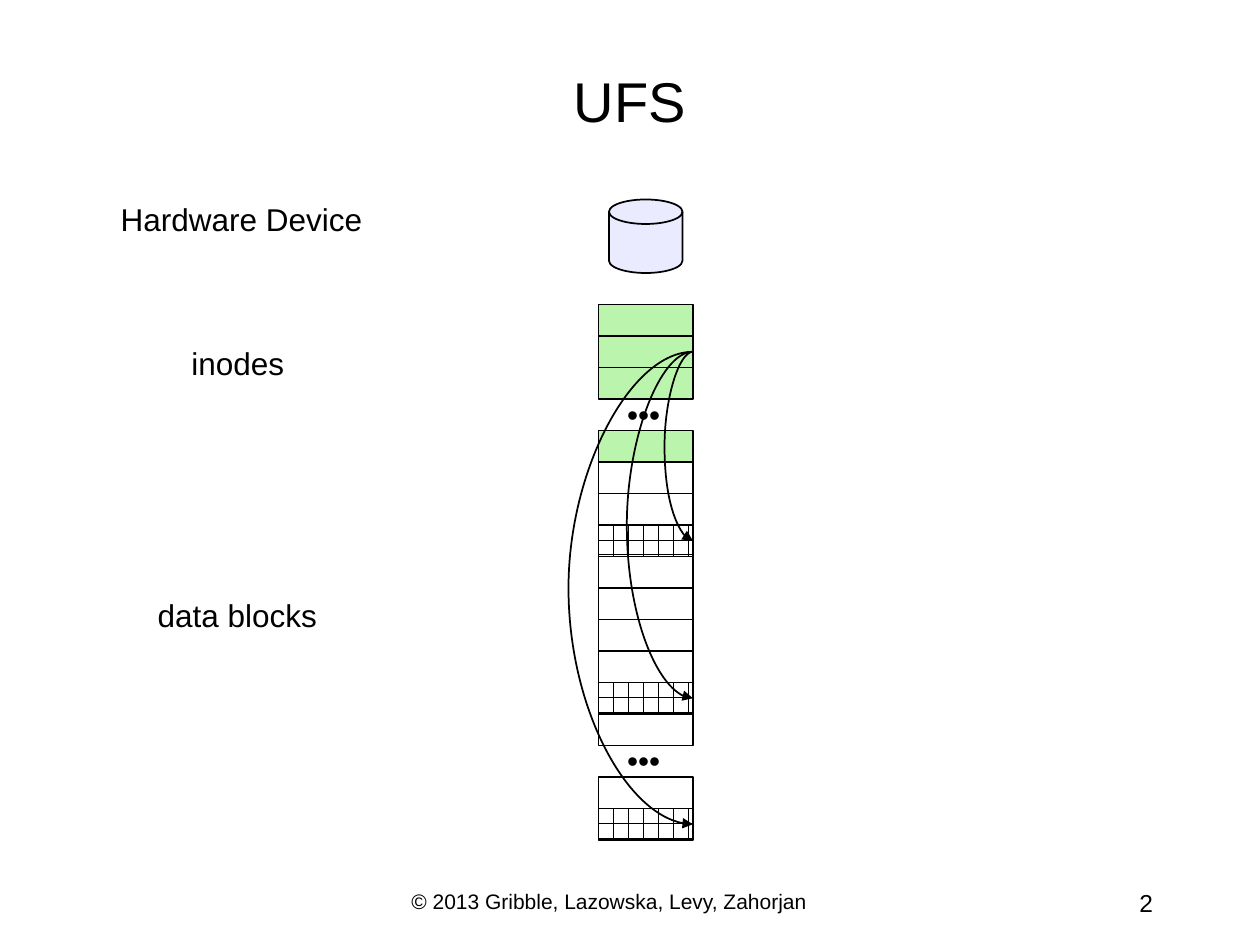
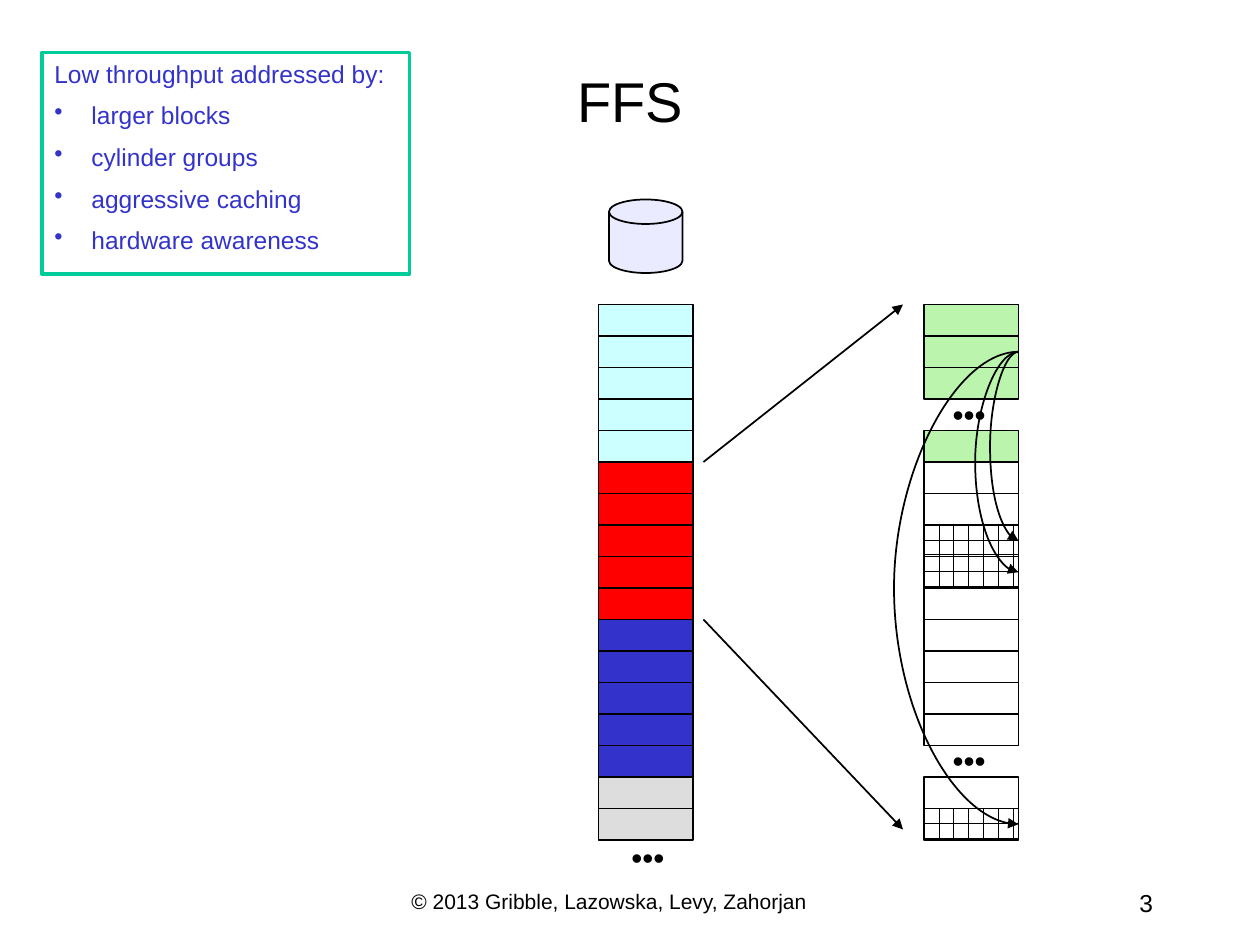
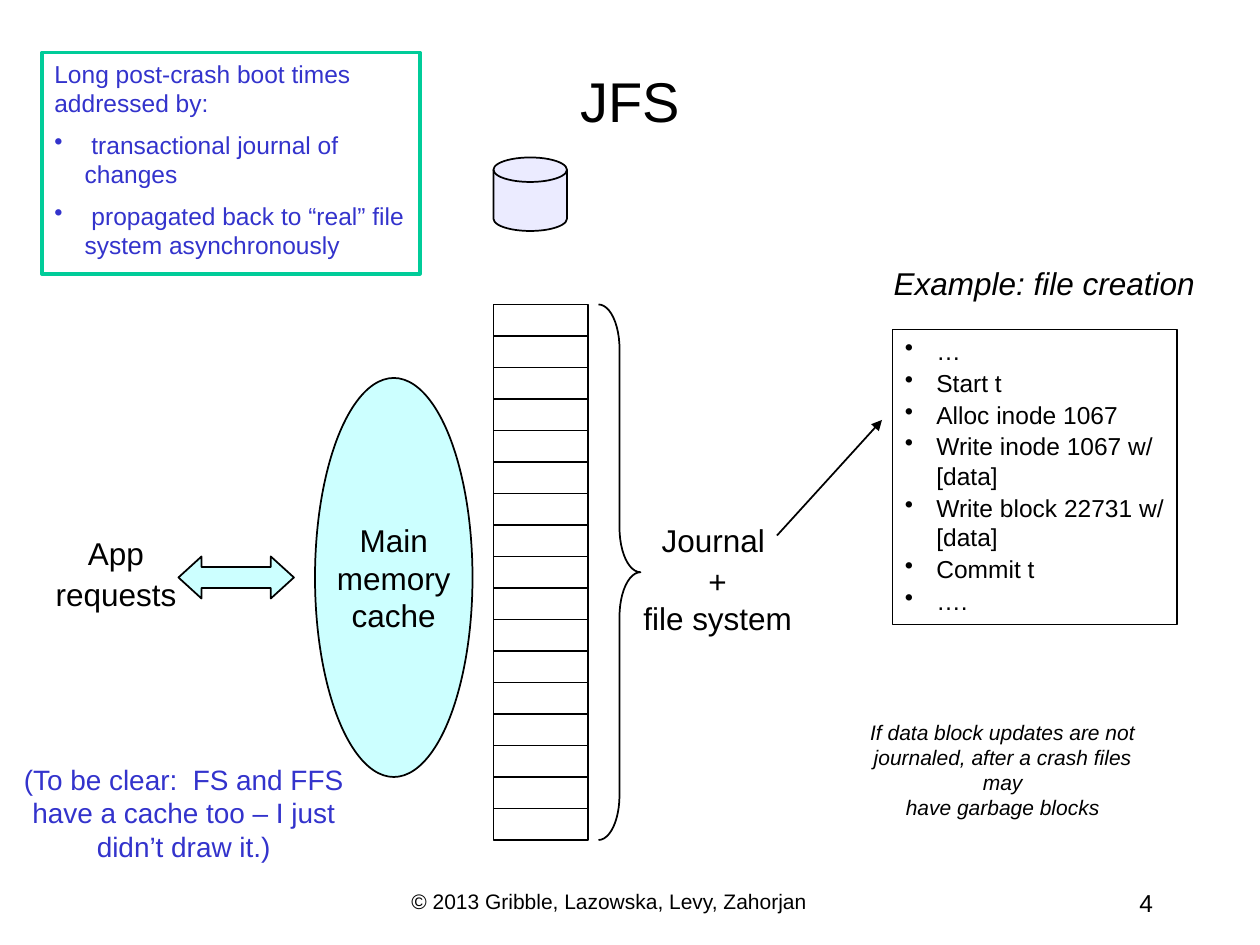
from copy import deepcopy
from dataclasses import dataclass

from lxml import etree
from pptx import Presentation
from pptx import util as u
from pptx.dml.color import RGBColor
from pptx.enum import dml, shapes, text
from pptx.oxml.ns import qn


@dataclass(frozen=True)
class Theme:
    font: str = "Arial"
    ink: str = "000000"
    paper: str = "FFFFFF"
    accent: str = "3333CC"
    frame: str = "00CC99"
    disk: str = "EBEBFF"
    inode: str = "BBF5AD"
    cache: str = "CCFFFF"
    active: str = "FF0000"
    rest: str = "DDDDDD"
    title: int = 32
    label: int = 18
    aside: int = 16
    body: int = 14
    small: int = 12


THEME = Theme()
SHAPE = shapes.MSO_SHAPE
LEFT, CENTER, RIGHT = text.PP_ALIGN.LEFT, text.PP_ALIGN.CENTER, text.PP_ALIGN.RIGHT

# The slide is a grid of 120 by 90 cells, 12 to the inch.
COLUMNS, ROWS, CELLS_PER_INCH = 120, 90, 12
BLOCK_WIDTH, BLOCK_HEIGHT, STACK_TOP = 9, 3, 29
DISK_COLUMN = 57
HAIRLINE = 1588  # EMU; the width that a pointer's bend is measured in

BLOCK_FILLS = {"i": THEME.inode, "-": None, "#": "brick", "c": THEME.cache,
               "r": THEME.active, "b": THEME.accent, "g": THEME.rest}
GAP = "."


def cells(count):
    return u.Inches(count / CELLS_PER_INCH)


def rgb(value):
    return RGBColor.from_string(value)


def write(frame, content, size=THEME.label, color=THEME.ink, align=CENTER,
          italic=False, before=0.1, bullets_from=None, indent=0.25,
          wrap=False, anchor=text.MSO_ANCHOR.TOP):
    """Fill a text frame; content is one string or a list of paragraphs."""
    frame.word_wrap = wrap
    frame.vertical_anchor = anchor
    lines = [content] if isinstance(content, str) else content
    for number, line in enumerate(lines):
        paragraph = frame.paragraphs[0] if number == 0 else frame.add_paragraph()
        paragraph.text = line
        paragraph.alignment = align
        paragraph.space_before = u.Pt(size * before)
        for run in paragraph.runs:
            run.font.name, run.font.size = THEME.font, u.Pt(size)
            run.font.italic = italic
            run.font.color.rgb = rgb(color)
        for line_break in paragraph._p.findall(qn("a:br")):
            line_break.append(deepcopy(paragraph.runs[0]._r.rPr))
        if bullets_from is not None and number >= bullets_from:
            properties = paragraph._p.get_or_add_pPr()
            properties.set("marL", str(u.Inches(indent)))
            properties.set("indent", str(-u.Inches(indent)))
            etree.SubElement(properties, qn("a:buChar")).set("char", "•")


def label(slide, box, content, **style):
    area = slide.shapes.add_textbox(*map(cells, box))
    write(area.text_frame, content, **style)


def outlined(slide, kind, box, fill=None, line=THEME.ink, weight=1):
    shape = slide.shapes.add_shape(kind, *map(cells, box))
    shape.shadow.inherit = False
    shape.line.color.rgb = rgb(line)
    shape.line.width = u.Pt(weight)
    if fill is None:
        shape.fill.background()
    elif fill == "brick":
        shape.fill.patterned()
        shape.fill.pattern = dml.MSO_PATTERN.HORIZONTAL_BRICK
        shape.fill.fore_color.rgb = rgb(THEME.ink)
        shape.fill.back_color.rgb = rgb(THEME.paper)
    else:
        shape.fill.solid()
        shape.fill.fore_color.rgb = rgb(fill)
    return shape


def arrow(slide, start, end, kind=shapes.MSO_CONNECTOR.STRAIGHT):
    connector = slide.shapes.add_connector(kind, *map(cells, (*start, *end)))
    connector.line.color.rgb = rgb(THEME.ink)
    connector.line.width = u.Pt(1)
    head = etree.SubElement(connector.line._get_or_add_ln(), qn("a:tailEnd"))
    head.set("type", "triangle")
    etree.SubElement(connector._element.spPr, qn("a:effectLst"))
    return connector


def pointer(slide, source, target, bend):
    """Curved arrow from the right side of one block to that of another."""
    connector = arrow(slide, (0, 0), (0, 0), shapes.MSO_CONNECTOR.CURVE)
    connector.begin_connect(source, 3)
    connector.end_connect(target, 3)
    connector.width = u.Emu(HAIRLINE)
    geometry = connector._element.spPr.find(qn("a:prstGeom"))
    guides = geometry.find(qn("a:avLst"))
    if guides is None:
        guides = etree.SubElement(geometry, qn("a:avLst"))
    guide = etree.SubElement(guides, qn("a:gd"))
    guide.set("name", "adj1")
    guide.set("fmla", f"val {bend * 100000}")


def ellipsis(slide, left, top):
    label(slide, (left, top, 6.6, 4.8), "•••")


def block_stack(slide, left, pattern):
    """Draw one block per letter of the pattern; return the blocks by row."""
    blocks = {}
    for row, letter in enumerate(pattern):
        top = STACK_TOP + row * BLOCK_HEIGHT
        if letter == GAP:
            ellipsis(slide, left + 1, top - 1)
        else:
            blocks[row] = outlined(slide, SHAPE.RECTANGLE,
                                   (left, top, BLOCK_WIDTH, BLOCK_HEIGHT),
                                   BLOCK_FILLS[letter])
    return blocks


def file_layout(slide, left, pattern, bends):
    """Stack of inodes and data blocks; the second inode points to its data."""
    blocks = block_stack(slide, left, pattern)
    used = [row for row, letter in enumerate(pattern) if letter == "#"]
    for row, bend in zip(used, bends):
        pointer(slide, blocks[1], blocks[row], bend)


def disk(slide, left=DISK_COLUMN + 1, top=19):
    outlined(slide, SHAPE.FLOWCHART_MAGNETIC_DISK, (left, top, 7, 7), THEME.disk)


def summary(slide, width, lines):
    box = outlined(slide, SHAPE.RECTANGLE, (4, 5, width, 21.1), line=THEME.frame, weight=2)
    write(box.text_frame, lines, size=THEME.body, color=THEME.accent, align=LEFT,
          before=0.5, bullets_from=1, indent=0.24, wrap=True)


def base_slide(deck, title, number):
    slide = deck.slides.add_slide(deck.slide_layouts[6])
    slide.background.fill.solid()
    slide.background.fill.fore_color.rgb = rgb(THEME.paper)
    label(slide, (38, 84, 44, 4), "© 2013 Gribble, Lazowska, Levy, Zahorjan",
          size=THEME.small, align=LEFT, before=0, wrap=True)
    label(slide, (86, 84, 25, 4), str(number), size=THEME.body, align=RIGHT,
          before=0, wrap=True)
    label(slide, (0, 5, COLUMNS, 9), title, size=THEME.title, before=0,
          wrap=True, anchor=text.MSO_ANCHOR.MIDDLE)
    return slide


def ufs_slide(deck):
    slide = base_slide(deck, "UFS", 2)
    disk(slide)
    file_layout(slide, DISK_COLUMN, "iii.i--#----#-.-#", (144, 334, 628))
    for box, name in (((10.3, 18.5, 25.4, 4.8), "Hardware Device"),
                      ((17, 32.2, 11.3, 4.8), "inodes"),
                      ((13.8, 56.2, 17.6, 4.8), "data blocks")):
        label(slide, box, name)


def ffs_slide(deck):
    slide = base_slide(deck, "FFS", 3)
    disk(slide)
    file_layout(slide, 88, "iii.i--##-----.-#", (144, 219, 628))
    block_stack(slide, DISK_COLUMN, "cccccrrrrrbbbbbgg")
    ellipsis(slide, DISK_COLUMN + 1.4, 79.2)
    arrow(slide, (67, 44), (86, 29))
    arrow(slide, (67, 59), (86, 79))
    summary(slide, 35, ["Low throughput addressed by:", " larger blocks",
                        " cylinder groups", " aggressive caching",
                        " hardware awareness"])


def journal_example(slide, left, top):
    label(slide, (left - 1.1, top - 6.8, 31.1, 4.8), "Example: file creation", italic=True)
    log = outlined(slide, SHAPE.RECTANGLE, (left, top, 27.1, 28.1), weight=0.75)
    write(log.text_frame,
          ["…", "Start t", "Alloc inode 1067", "Write inode 1067 w/\n[data]",
           "Write block 22731 w/\n[data]", "Commit t", "…."],
          size=THEME.body, align=LEFT, bullets_from=0)
    label(slide, (left - 5.1, top + 36.5, 31.2, 8.4),
          "If data block updates are not\njournaled, after a crash files may\n"
          "have garbage blocks", size=THEME.small, italic=True, wrap=True)


def cache_and_requests(slide):
    cache = outlined(slide, SHAPE.OVAL, (30, 36, 15, 38), THEME.cache)
    write(cache.text_frame, "Main\nmemory\ncache", anchor=text.MSO_ANCHOR.MIDDLE)
    exchange = outlined(slide, SHAPE.LEFT_RIGHT_ARROW, (17, 53, 11, 4), THEME.cache)
    exchange.adjustments[0], exchange.adjustments[1] = 0.5, 0.55
    label(slide, (4.1, 50.3, 13.9, 8.8), ["App", "requests"])
    label(slide, (0, 72, 35, 10.8),
          "(To be clear:  FS and FFS have a cache too – I just didn’t draw it.)",
          size=THEME.aside, color=THEME.accent, before=0.5, wrap=True)


def jfs_slide(deck):
    slide = base_slide(deck, "JFS", 4)
    disk(slide, 47, 15)
    blocks = block_stack(slide, 47, "-" * 17)
    label(slide, (60, 49, 16.7, 12.5), ["Journal ", "+\nfile system"])
    brace = outlined(slide, SHAPE.RIGHT_BRACE,
                     (57, STACK_TOP, 4, len(blocks) * BLOCK_HEIGHT))
    brace.adjustments[0], brace.adjustments[1] = 1.06, 0.5
    journal_example(slide, 85, 31.4)
    arrow(slide, (74, 51), (84, 40))
    cache_and_requests(slide)
    summary(slide, 36, ["Long post-crash boot times addressed by:",
                        " transactional journal of changes",
                        " propagated back to “real” file system asynchronously"])


def main():
    deck = Presentation()
    deck.slide_width, deck.slide_height = cells(COLUMNS), cells(ROWS)
    for build in (ufs_slide, ffs_slide, jfs_slide):
        build(deck)
    deck.save("out.pptx")


if __name__ == "__main__":
    main()
